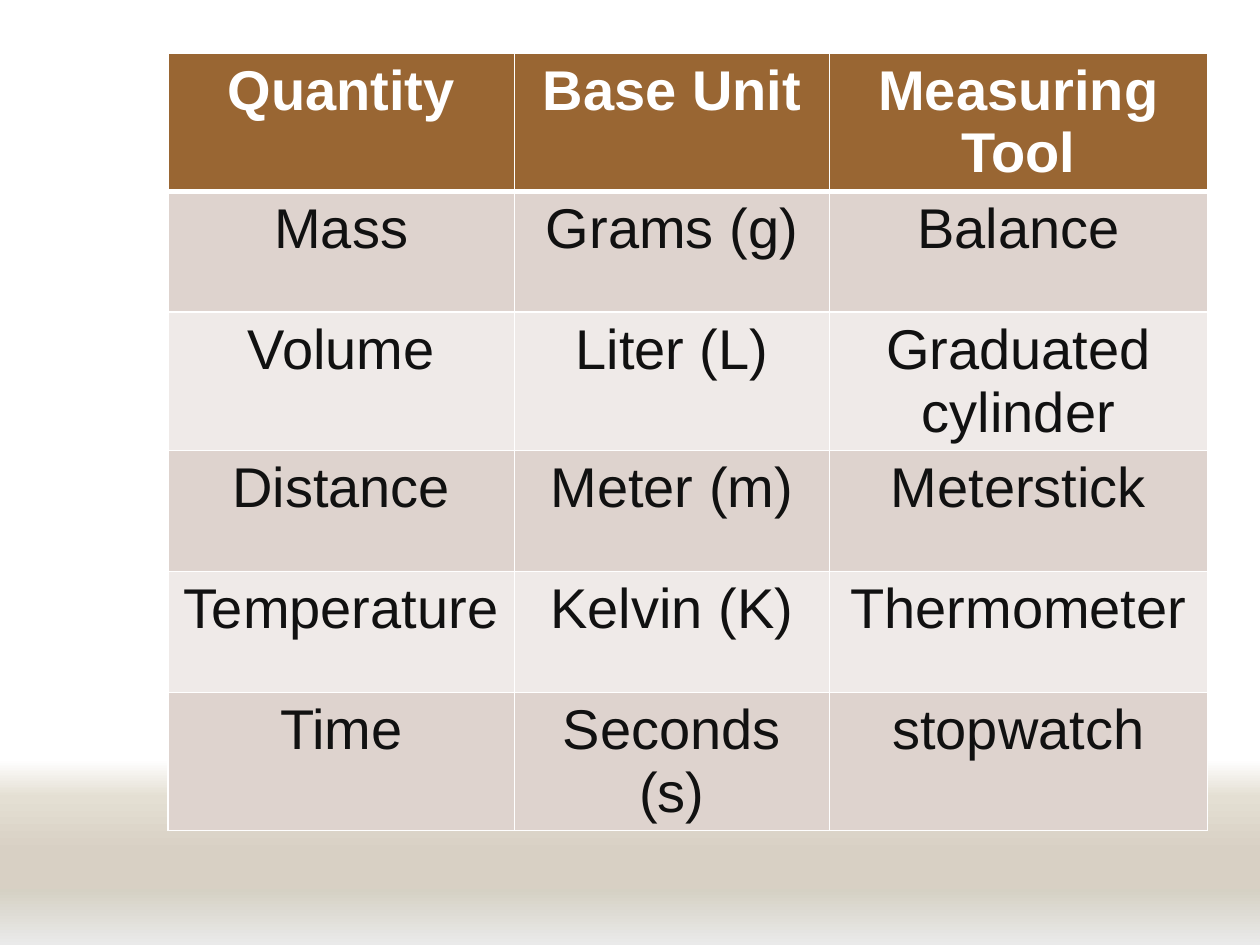
from copy import deepcopy
from lxml.etree import SubElement
from pptx import Presentation
from pptx.dml.color import RGBColor
from pptx.enum.shapes import MSO_SHAPE
from pptx.enum.text import PP_ALIGN
from pptx.oxml.ns import qn
from pptx.util import Pt

THEME = {
    "font": "Arial",
    "size": Pt(32),
    "header_fill": "996633",
    "header_text": "FFFFFF",
    "body_text": "111111",
    "bands": ["DED3CE", "EFEAE8"],
    "border": "FFFFFF",
    "glow": [(0, "FFFFFF"), (20, "E4DFD3"), (50, "D8D0C4"), (70, "D5D1C4"), (100, "EAEAEA")],
}

ROWS = [
    ("Quantity", "Base Unit", "Measuring Tool"),
    ("Mass", "Grams (g)", "Balance"),
    ("Volume", "Liter (L)", "Graduated cylinder"),
    ("Distance", "Meter (m)", "Meterstick"),
    ("Temperature", "Kelvin (K)", "Thermometer"),
    ("Time", "Seconds (s)", "stopwatch"),
]
COLUMN_WIDTHS = [Pt(198), Pt(180), Pt(216)]
ROW_HEIGHT = Pt(69.12)


def add_border(cell, side, width):
    line = SubElement(cell._tc.get_or_add_tcPr(), qn(f"a:{side}"), w=str(width))
    fill = SubElement(line, qn("a:solidFill"))
    SubElement(fill, qn("a:srgbClr"), val=THEME["border"])


deck = Presentation()
deck.slide_width, deck.slide_height = Pt(720), Pt(540)
page = deck.slides.add_slide(deck.slide_layouts[6])

# Gradient band along the bottom
band = page.shapes.add_shape(MSO_SHAPE.RECTANGLE, 0, Pt(434), Pt(720), Pt(106))
band.shadow.inherit = False
band.line.fill.background()
band.fill.gradient()
band.fill.gradient_angle = 270
stop_list = band._element.spPr.find(qn("a:gradFill")).find(qn("a:gsLst"))
for _ in range(len(THEME["glow"]) - len(stop_list)):
    stop_list.append(deepcopy(stop_list[0]))
for stop, (position, color) in zip(band.fill.gradient_stops, THEME["glow"]):
    stop.position = position / 100
    stop.color.rgb = RGBColor.from_string(color)

# Table of quantities, units and tools
table = page.shapes.add_table(
    len(ROWS), len(COLUMN_WIDTHS), Pt(96), Pt(30.24),
    sum(COLUMN_WIDTHS), ROW_HEIGHT * len(ROWS),
).table
for column, width in zip(table.columns, COLUMN_WIDTHS):
    column.width = width

for row_index, labels in enumerate(ROWS):
    table.rows[row_index].height = ROW_HEIGHT
    is_header = row_index == 0
    fill_color = THEME["header_fill"] if is_header else THEME["bands"][(row_index - 1) % 2]
    text_color = THEME["header_text"] if is_header else THEME["body_text"]
    font_format = {"name": THEME["font"], "size": THEME["size"], "bold": is_header}
    for column_index, label in enumerate(labels):
        cell = table.cell(row_index, column_index)
        # Borders go before the fill; the rule under the header is heavier
        for side in ("lnL", "lnR", "lnT", "lnB"):
            under_header = (row_index, side) in ((0, "lnB"), (1, "lnT"))
            add_border(cell, side, Pt(3) if under_header else Pt(1))
        cell.fill.solid()
        cell.fill.fore_color.rgb = RGBColor.from_string(fill_color)
        cell.text = label
        para = cell.text_frame.paragraphs[0]
        para.alignment = PP_ALIGN.CENTER
        span = para.runs[0]
        for name, value in font_format.items():
            setattr(span.font, name, value)
        span.font.color.rgb = RGBColor.from_string(text_color)

deck.save("out.pptx")
